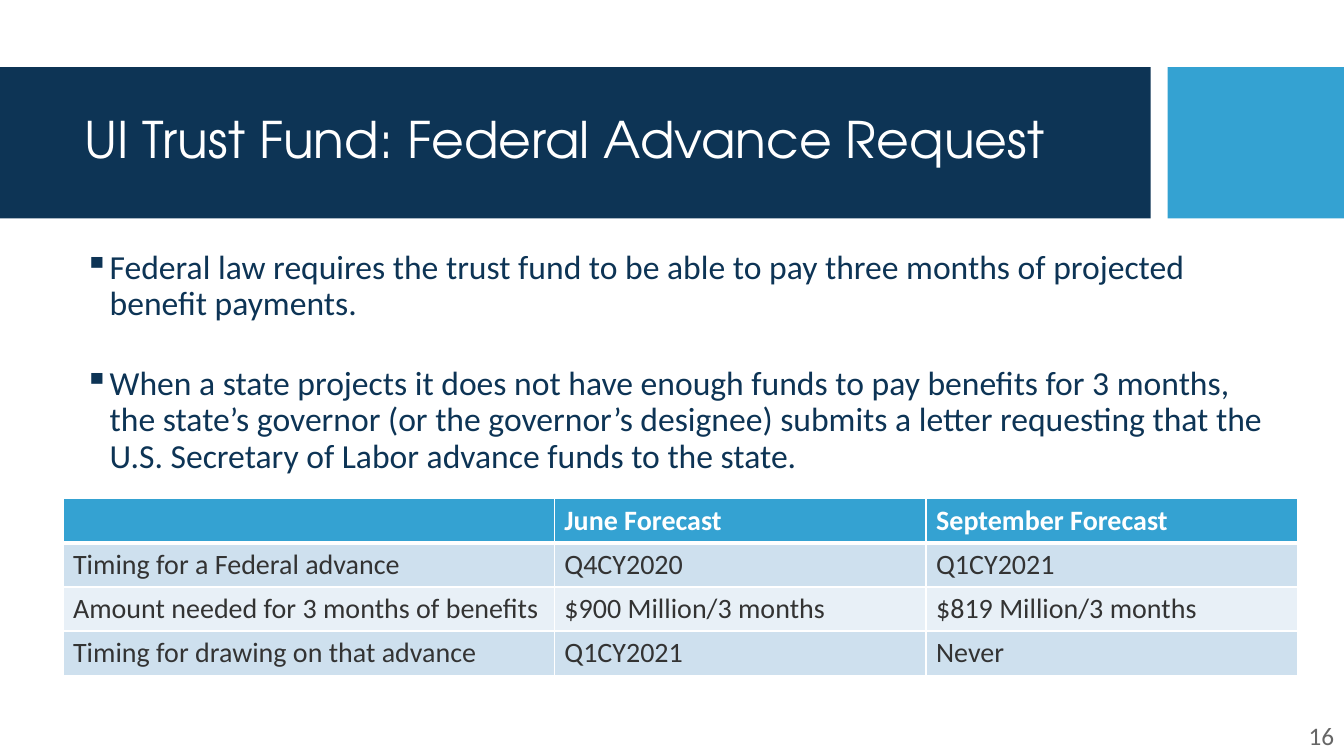
from lxml.etree import SubElement
from pptx import Presentation
from pptx.dml.color import RGBColor
from pptx.enum.shapes import MSO_SHAPE
from pptx.enum.text import MSO_ANCHOR, PP_ALIGN
from pptx.oxml import parse_xml
from pptx.oxml.ns import nsdecls, qn
from pptx.util import Pt

PX = 9525  # EMU per px, 96 px to the inch

NAVY = RGBColor(0x0D, 0x34, 0x55)
SKY = RGBColor(0x34, 0xA2, 0xD2)
WHITE = RGBColor(0xFF, 0xFF, 0xFF)
BAND_DARK = RGBColor(0xCE, 0xE0, 0xEE)
BAND_LIGHT = RGBColor(0xE8, 0xF0, 0xF7)
CHARCOAL = RGBColor(0x33, 0x33, 0x33)
GRAY = RGBColor(0x66, 0x66, 0x66)

TITLE_FONT = "TeX Gyre Adventor"
BODY_FONT = "Calibri"

POINTS = [
    "Federal law requires the trust fund to be able to pay three months of "
    "projected benefit payments.",
    "When a state projects it does not have enough funds to pay benefits for "
    "3 months, the state’s governor (or the governor’s designee) submits a "
    "letter requesting that the U.S. Secretary of Labor advance funds to the "
    "state.",
]
FORECASTS = [
    ["", "June Forecast", "September Forecast"],
    ["Timing for a Federal advance", "Q4CY2020", "Q1CY2021"],
    ["Amount needed for 3 months of benefits", "$900 Million/3 months",
     "$819 Million/3 months"],
    ["Timing for drawing on that advance", "Q1CY2021", "Never"],
]
COLUMN_WIDTHS = [468, 354, 354]
ROW_HEIGHT = 42


def box(*lengths):
    return [length * PX for length in lengths]


def style(paragraph, size, color, name=BODY_FONT, bold=False):
    font = paragraph.font
    font.name, font.size, font.bold = name, Pt(size), bold
    font.color.rgb = color


def add_block(slide, place, color):
    block = slide.shapes.add_shape(MSO_SHAPE.RECTANGLE, *box(*place))
    block.shadow.inherit = False
    block.fill.solid()
    block.fill.fore_color.rgb = color
    block.line.fill.background()


def add_text(slide, place, anchor=MSO_ANCHOR.TOP):
    frame = slide.shapes.add_textbox(*box(*place)).text_frame
    frame.word_wrap = True
    frame.vertical_anchor = anchor
    return frame


def add_title(slide, place, text):
    title = add_text(slide, place, MSO_ANCHOR.MIDDLE).paragraphs[0]
    title.text = text
    title.line_spacing = 0.9
    style(title, 36, WHITE, TITLE_FONT)


def add_bullets(slide, place, points):
    frame = add_text(slide, place)
    for index, text in enumerate(points):
        point = frame.add_paragraph() if index else frame.paragraphs[0]
        point.text = text
        point.line_spacing = 0.9
        if index:
            point.space_before = Pt(31)
        properties = point._p.get_or_add_pPr()
        properties.set("marL", str(24 * PX))
        properties.set("indent", str(-24 * PX))
        SubElement(properties, qn("a:buChar"), char="▪")
        style(point, 24, NAVY)


def add_page_number(slide, place, number):
    page = add_text(slide, place, MSO_ANCHOR.MIDDLE).paragraphs[0]
    page.text = number
    page.alignment = PP_ALIGN.RIGHT
    style(page, 18, GRAY)


def set_borders(cell, top, bottom):
    widths = {"lnL": 1, "lnR": 1, "lnT": top, "lnB": bottom}
    properties = cell._tc.get_or_add_tcPr()
    for position, (edge, width) in enumerate(widths.items()):
        properties.insert(position, parse_xml(
            f'<a:{edge} {nsdecls("a")} w="{Pt(width)}"><a:solidFill>'
            f'<a:srgbClr val="{WHITE}"/></a:solidFill></a:{edge}>'))


def add_forecast_table(slide, left, top, rows):
    place = box(left, top, sum(COLUMN_WIDTHS), ROW_HEIGHT * len(rows))
    table = slide.shapes.add_table(len(rows), len(COLUMN_WIDTHS), *place).table
    for column, width in zip(table.columns, COLUMN_WIDTHS):
        column.width = width * PX
    for r, texts in enumerate(rows):
        header = r == 0
        band = SKY if header else BAND_DARK if r % 2 else BAND_LIGHT
        for c, text in enumerate(texts):
            cell = table.cell(r, c)
            cell.text = text
            cell.fill.solid()
            cell.fill.fore_color.rgb = band
            # A thick rule parts the header from the rows below
            set_borders(cell, 3 if r == 1 else 1, 3 if header else 1)
            style(cell.text_frame.paragraphs[0], 20,
                  WHITE if header else CHARCOAL, bold=header)


def main():
    deck = Presentation()
    deck.slide_width, deck.slide_height = box(1280, 720)
    slide = deck.slides.add_slide(deck.slide_layouts[6])

    # Title band
    add_block(slide, (0, 64, 1096, 144), NAVY)
    add_block(slide, (1112, 64, 168, 144), SKY)
    add_title(slide, (71, 79, 1009, 113),
              "UI Trust Fund: Federal Advance Request")

    # Explanation and forecasts
    add_bullets(slide, (71, 234, 1149, 228), POINTS)
    add_forecast_table(slide, 60, 475, FORECASTS)

    # Footer
    add_page_number(slide, (1212, 681, 68, 39), "16")

    deck.save("out.pptx")


if __name__ == "__main__":
    main()
